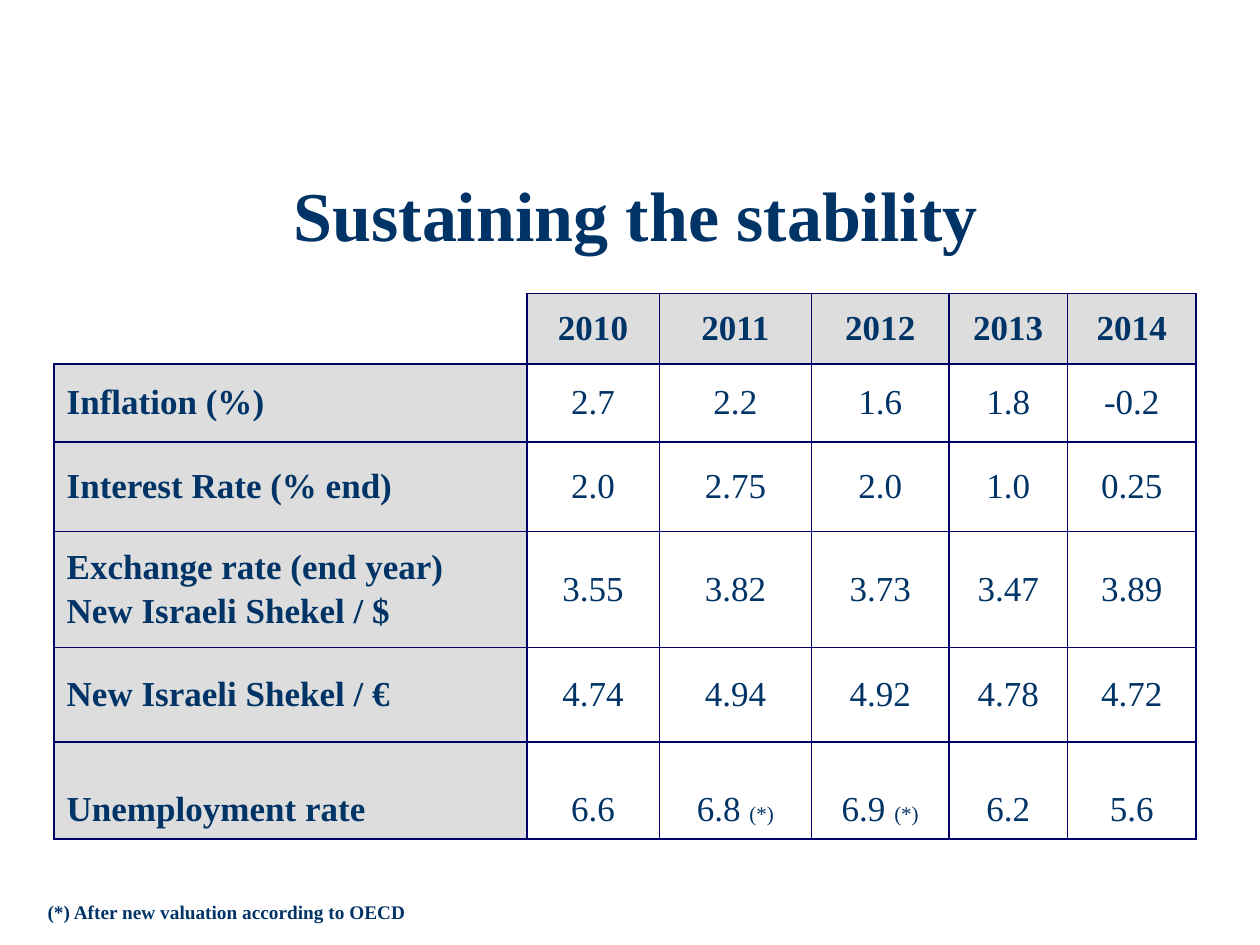
from dataclasses import dataclass

from lxml import etree
from pptx import Presentation, util as u
from pptx.dml.color import RGBColor
from pptx.enum import text
from pptx.oxml import ns

HUES = {"ink": "003366", "line": "000066", "head": "DDDDDD", "body": "FFFFFF"}
FONT = "Times New Roman"
NOTE = "(*)"
WIDTHS = (9.53, 2.67, 3.07, 2.77, 2.39, 2.59)
ALIGN = text.PP_ALIGN


@dataclass
class Row:
    label: str
    height: float
    cells: tuple[str, ...]
    loose: bool = False


@dataclass
class Label:
    words: str
    box: tuple[float, float, float, float]
    size: int
    align: ALIGN
    top: float = 0.13


ROWS = (
    Row("", 1.42, ("2010", "2011", "2012", "2013", "2014")),
    Row("Inflation (%)", 1.57, ("2.7", "2.2", "1.6", "1.8", "-0.2")),
    Row("Interest Rate (% end)", 1.8, ("2.0", "2.75", "2.0", "1.0", "0.25")),
    Row("Exchange rate (end year)\nNew Israeli Shekel / $", 2.34,
        ("3.55", "3.82", "3.73", "3.47", "3.89")),
    Row("New Israeli Shekel / €", 1.91, ("4.74", "4.94", "4.92", "4.78", "4.72")),
    Row("Unemployment rate", 1.8, ("6.6", "6.8 (*)", "6.9 (*)", "6.2", "5.6"), True),
)
LABELS = (
    Label("Sustaining the stability", (0.43, 3.15, 24.77, 3.18), 40, ALIGN.CENTER, 0.3),
    Label("(*) After new valuation according to OECD", (0.71, 18.01, 13.21, 0.74), 11,
          ALIGN.JUSTIFY),
)


def style(run, size: int, bold: bool) -> None:
    """Set the font, size, weight and colour of a run."""
    run.font.name, run.font.size, run.font.bold = FONT, u.Pt(size), bold
    run.font.color.rgb = RGBColor.from_string(HUES["ink"])


def border(cell, sides: str) -> None:
    """Draw thin lines on the given sides of a cell."""
    props = cell._tc.get_or_add_tcPr()
    for spot, side in enumerate(sides):
        line = etree.Element(ns.qn(f"a:ln{side}"), w=str(u.Pt(1)))
        fill = etree.SubElement(line, ns.qn("a:solidFill"))
        etree.SubElement(fill, ns.qn("a:srgbClr"), val=HUES["line"])
        props.insert(spot, line)


def write(cell, words: str, bold: bool, align: ALIGN, loose: bool) -> None:
    """Fill a cell with words, setting note marks small."""
    cell.vertical_anchor = text.MSO_ANCHOR.MIDDLE
    cell.text_frame.text = words.replace(NOTE, "")
    for spot, para in enumerate(cell.text_frame.paragraphs):
        para.alignment = align
        if spot:
            para.space_before = u.Pt(3)
        if loose:
            para.line_spacing, para.space_after = 2.0, u.Pt(6)
        for run in para.runs:
            style(run, 20, bold)
        if NOTE in words:
            mark = para.add_run()
            mark.text = NOTE
            style(mark, 12, bold)


def grid(slide, rows: tuple[Row, ...]) -> None:
    """Draw the table of yearly rates."""
    table = slide.shapes.add_table(
        len(rows), len(WIDTHS), u.Cm(1.09), u.Cm(5.92),
        u.Cm(sum(WIDTHS)), u.Cm(sum(row.height for row in rows))).table
    table.first_row = table.horz_banding = False
    for col, width in zip(table.columns, WIDTHS):
        col.width = u.Cm(width)
    for y, row in enumerate(rows):
        table.rows[y].height = u.Cm(row.height)
        for x, words in enumerate((row.label, *row.cells)):
            cell = table.cell(y, x)
            head = x == 0 or y == 0
            if not words:
                cell.fill.background()
                border(cell, "RB")
                continue
            cell.fill.solid()
            cell.fill.fore_color.rgb = RGBColor.from_string(HUES["head" if head else "body"])
            border(cell, "LRTB")
            write(cell, words, head, ALIGN.CENTER if x else ALIGN.LEFT, row.loose)


def label(slide, item: Label) -> None:
    """Add one bold line of text."""
    frame = slide.shapes.add_textbox(*map(u.Cm, item.box)).text_frame
    frame.word_wrap = True
    frame.margin_top = u.Cm(item.top)
    frame.text = item.words
    para = frame.paragraphs[0]
    para.alignment = item.align
    style(para.runs[0], item.size, True)


def main() -> None:
    """Build and save the slide."""
    deck = Presentation()
    deck.slide_width, deck.slide_height = u.Cm(25.4), u.Cm(19.05)
    slide = deck.slides.add_slide(deck.slide_layouts[6])
    title, note = LABELS
    label(slide, title)
    grid(slide, ROWS)
    label(slide, note)
    deck.save("out.pptx")


if __name__ == "__main__":
    main()
